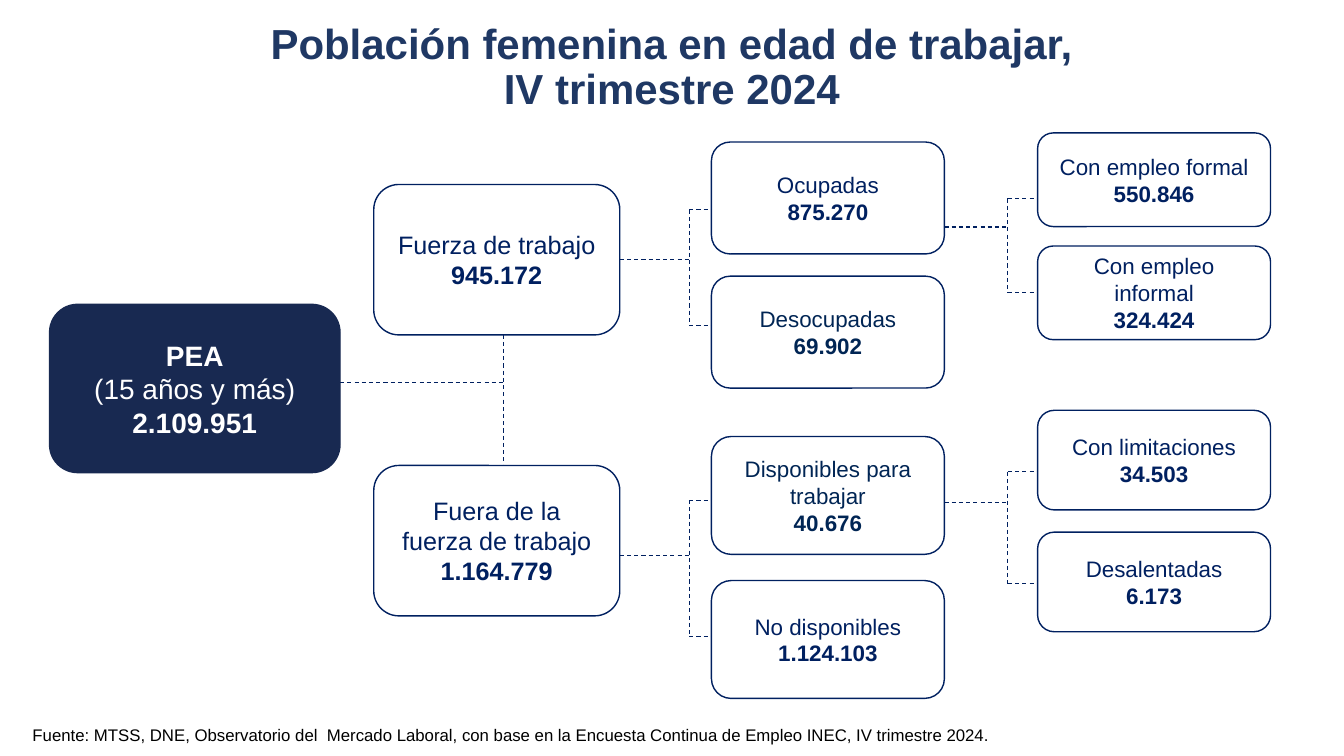
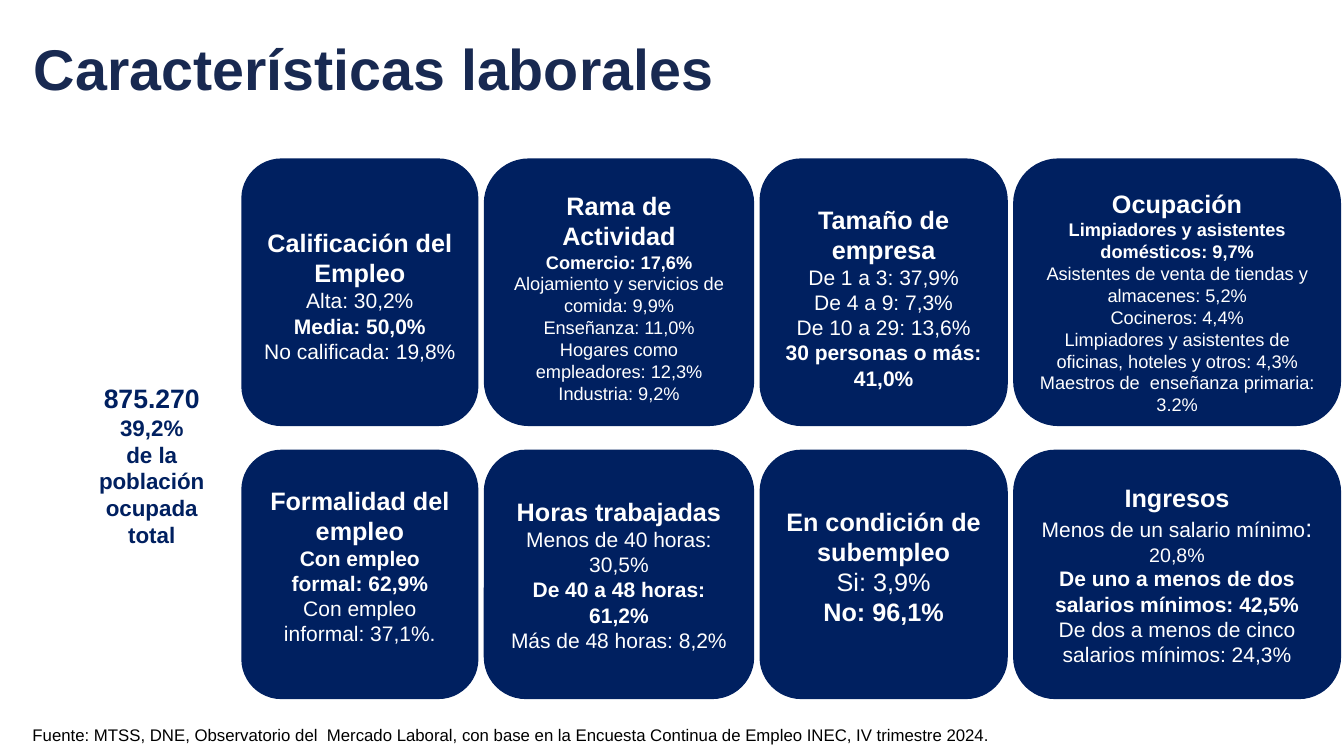
from collections import namedtuple
from dataclasses import dataclass

from lxml.etree import SubElement
from pptx import Presentation
from pptx.dml.color import RGBColor
from pptx.enum.dml import MSO_LINE
from pptx.enum.shapes import MSO_CONNECTOR, MSO_SHAPE
from pptx.enum.text import MSO_ANCHOR, PP_ALIGN
from pptx.oxml.ns import qn
from pptx.util import Cm, Pt


@dataclass(frozen=True)
class Theme:
    font: str = "Arial"
    navy: RGBColor = RGBColor(0x00, 0x20, 0x60)
    teal_navy: RGBColor = RGBColor(0x00, 0x25, 0x54)
    dark_navy: RGBColor = RGBColor(0x18, 0x29, 0x51)
    title_blue: RGBColor = RGBColor(0x1F, 0x38, 0x64)
    white: RGBColor = RGBColor(0xFF, 0xFF, 0xFF)
    black: RGBColor = RGBColor(0x00, 0x00, 0x00)
    tree_title: int = 30
    cards_title: int = 41
    root: int = 20
    branch: int = 18
    leaf: int = 16
    total: int = 19
    heading: int = 18
    body: int = 15
    small: int = 13
    source: int = 12


THEME = Theme()
SOURCE = ("Fuente: MTSS, DNE, Observatorio del  Mercado Laboral, con base en la "
          "Encuesta Continua de Empleo INEC, IV trimestre 2024.")

# A line is one paragraph; tail holds further (text, size) spans
Line = namedtuple("Line", "text size bold tail", defaults=(False, ()))
# drop is the extra space in points above the text (below it if negative)
Card = namedtuple("Card", "lines drop")


# ---- Kinds of element ----
def write_lines(frame, lines, colour, spacing=None):
    frame.word_wrap = True
    for index, line in enumerate(lines):
        para = frame.paragraphs[0] if index == 0 else frame.add_paragraph()
        para.alignment = PP_ALIGN.CENTER
        if spacing:
            para.line_spacing = spacing
        para.font.name = THEME.font
        para.font.size = Pt(line.size)
        para.font.bold = line.bold
        para.font.color.rgb = colour
        para.add_run().text = line.text
        for text, size in line.tail:
            span = para.add_run()
            span.text = text
            span.font.size = Pt(size)


def add_text(page, left, top, width, height, lines, colour, spacing=None):
    box = page.shapes.add_textbox(Cm(left), Cm(top), Cm(width), Cm(height))
    write_lines(box.text_frame, lines, colour, spacing)


def add_panel(page, left, top, width, height, lines, fill, outline, colour, drop=0):
    panel = page.shapes.add_shape(MSO_SHAPE.ROUNDED_RECTANGLE,
                                  Cm(left), Cm(top), Cm(width), Cm(height))
    panel.shadow.inherit = False
    panel.fill.solid()
    panel.fill.fore_color.rgb = fill
    panel.line.color.rgb = outline
    panel.line.width = Pt(1)
    frame = panel.text_frame
    frame.vertical_anchor = MSO_ANCHOR.MIDDLE
    frame.margin_top += Pt(max(drop, 0))
    frame.margin_bottom += Pt(max(-drop, 0))
    write_lines(frame, lines, colour)


def add_dash(page, x1, y1, x2, y2):
    dash = page.shapes.add_connector(MSO_CONNECTOR.STRAIGHT,
                                     Cm(x1), Cm(y1), Cm(x2), Cm(y2))
    dash.line.color.rgb = THEME.navy
    dash.line.width = Pt(0.75)
    dash.line.dash_style = MSO_LINE.DASH
    SubElement(dash.element.spPr, qn("a:effectLst"))


def add_fork(page, start, stem, spine, ends, stop):
    """Stem to a vertical spine, then one twig to each end."""
    add_dash(page, start, stem, spine, stem)
    add_dash(page, spine, ends[0], spine, ends[-1])
    if stop > spine:
        for end in ends:
            add_dash(page, spine, end, stop, end)


def add_node(page, left, top, width, height, label, value, size, colour=THEME.navy):
    lines = [Line(text, size) for text in label] + [Line(value, size, True)]
    add_panel(page, left, top, width, height, lines, THEME.white, THEME.navy, colour)


def add_page(deck):
    page = deck.slides.add_slide(deck.slide_layouts[6])
    add_text(page, 0.33, 18.14, 25.12, 0.76, [Line(SOURCE, THEME.source)], THEME.black)
    return page


# ---- Slide 1: tree of the working-age population ----
def build_tree(deck):
    page = add_page(deck)
    add_text(page, 0, 0.46, 33.87, 2.57,
             [Line("Población femenina en edad de trabajar,", THEME.tree_title, True),
              Line("IV trimestre 2024", THEME.tree_title, True)],
             THEME.title_blue, 0.9)

    # Connecting lines: start, stem height, spine, twig heights, stop
    for fork in (
        (8.57, 9.63, 12.7, (8.43, 11.73), 12.7),
        (15.62, 6.55, 17.37, (5.28, 8.2), 17.93),
        (15.62, 14, 17.37, (12.6, 16.03), 17.93),
        (23.8, 5.72, 25.4, (5, 7.37), 26.15),
        (23.8, 12.65, 25.4, (11.89, 14.71), 26.15),
    ):
        add_fork(page, *fork)

    # Root and its two branches
    add_panel(page, 1.25, 7.67, 7.32, 4.24,
              [Line("PEA", THEME.root, True), Line("(15 años y más)", THEME.root),
               Line("2.109.951", THEME.root, True)],
              THEME.dark_navy, THEME.dark_navy, THEME.white)
    for top, label, value in (
        (4.65, ["Fuerza de trabajo"], "945.172"),
        (11.73, ["Fuera de la", "fuerza de trabajo"], "1.164.779"),
    ):
        add_node(page, 9.42, top, 6.2, 3.79, label, value, THEME.branch)

    # Two outer columns
    for left, top, height, label, value, colour in (
        (17.93, 3.58, 2.82, "Ocupadas", "875.270", THEME.navy),
        (17.93, 6.96, 2.82, "Desocupadas", "69.902", THEME.teal_navy),
        (17.93, 11, 2.97, "Disponibles para trabajar", "40.676", THEME.teal_navy),
        (17.93, 14.63, 2.97, "No disponibles", "1.124.103", THEME.navy),
        (26.15, 3.35, 2.36, "Con empleo formal", "550.846", THEME.navy),
        (26.15, 6.2, 2.36, "Con empleo informal", "324.424", THEME.navy),
        (26.15, 10.34, 2.51, "Con limitaciones", "34.503", THEME.navy),
        (26.15, 13.41, 2.51, "Desalentadas", "6.173", THEME.navy),
    ):
        add_node(page, left, top, 5.87, height, [label], value, THEME.leaf, colour)


# ---- Slide 2: cards of job characteristics ----
def make_card(heading, size, items, drop=0):
    """Items that start with * are bold."""
    lines = [Line(heading, THEME.heading, True)]
    for item in items:
        if isinstance(item, Line):
            lines.append(item)
        else:
            lines.append(Line(item.lstrip("*"), size, item.startswith("*")))
    return Card(lines, drop)


def build_cards(deck):
    page = add_page(deck)
    add_text(page, 0.18, 0.91, 18.49, 1.83,
             [Line("Características laborales", THEME.cards_title, True)],
             THEME.dark_navy, 0.9)
    add_text(page, 2.11, 9.5, 3.43, 4.5,
             [Line("875.270", THEME.total, True), Line("39,2%", THEME.leaf, True),
              Line("de la población ocupada total", THEME.leaf, True)], THEME.navy)

    body, small = THEME.body, THEME.small
    upper = (
        make_card("Calificación del Empleo", body,
                  ["Alta: 30,2%", "*Media: 50,0%", "No calificada: 19,8%"], 4.6),
        make_card("Rama de Actividad", small,
                  ["*Comercio: 17,6%", "Alojamiento y servicios de comida: 9,9%",
                   "Enseñanza: 11,0%", "Hogares como empleadores: 12,3%",
                   "Industria: 9,2%"], 6.9),
        make_card("Tamaño de empresa", body,
                  ["De 1 a 3: 37,9%", "De 4 a 9: 7,3%", "De 10 a 29: 13,6%",
                   "*30 personas o más: 41,0%"], 6.9),
        make_card("Ocupación", small,
                  ["*Limpiadores y asistentes domésticos: 9,7%",
                   "Asistentes de venta de tiendas y almacenes: 5,2%",
                   "Cocineros: 4,4%",
                   "Limpiadores y asistentes de oficinas, hoteles y otros: 4,3%",
                   "Maestros de  enseñanza primaria: 3.2%"], 13.8),
    )
    minimum_wage = Line("Menos de un salario mínimo", body, False,
                        ((": ", THEME.heading), ("20,8%", 14)))
    lower = (
        make_card("Formalidad del empleo", body,
                  ["*Con empleo", "*formal: 62,9%", "Con empleo", "informal: 37,1%."],
                  -12.6),
        make_card("Horas trabajadas", body,
                  ["Menos de 40 horas: 30,5%", "*De 40 a 48 horas: 61,2%",
                   "Más de 48 horas: 8,2%"]),
        make_card("En condición de subempleo", THEME.heading,
                  ["Si: 3,9%", "*No: 96,1%"], -11.5),
        make_card("Ingresos", body,
                  [minimum_wage, "*De uno a menos de dos salarios mínimos: 42,5%",
                   "De dos a menos de cinco salarios mínimos: 24,3%"]),
    )

    # Columns follow one another with an equal gap
    widths, gap = (5.94, 6.78, 6.22, 8.23), 0.17
    for top, height, cards in ((4.01, 6.71, upper), (11.35, 6.25, lower)):
        left = 6.1
        for width, card in zip(widths, cards):
            add_panel(page, left, top, width, height, card.lines,
                      THEME.navy, THEME.navy, THEME.white, card.drop)
            left += width + gap


def main():
    deck = Presentation()
    deck.slide_width, deck.slide_height = Cm(33.87), Cm(19.05)
    build_tree(deck)
    build_cards(deck)
    deck.save("out.pptx")


if __name__ == "__main__":
    main()
